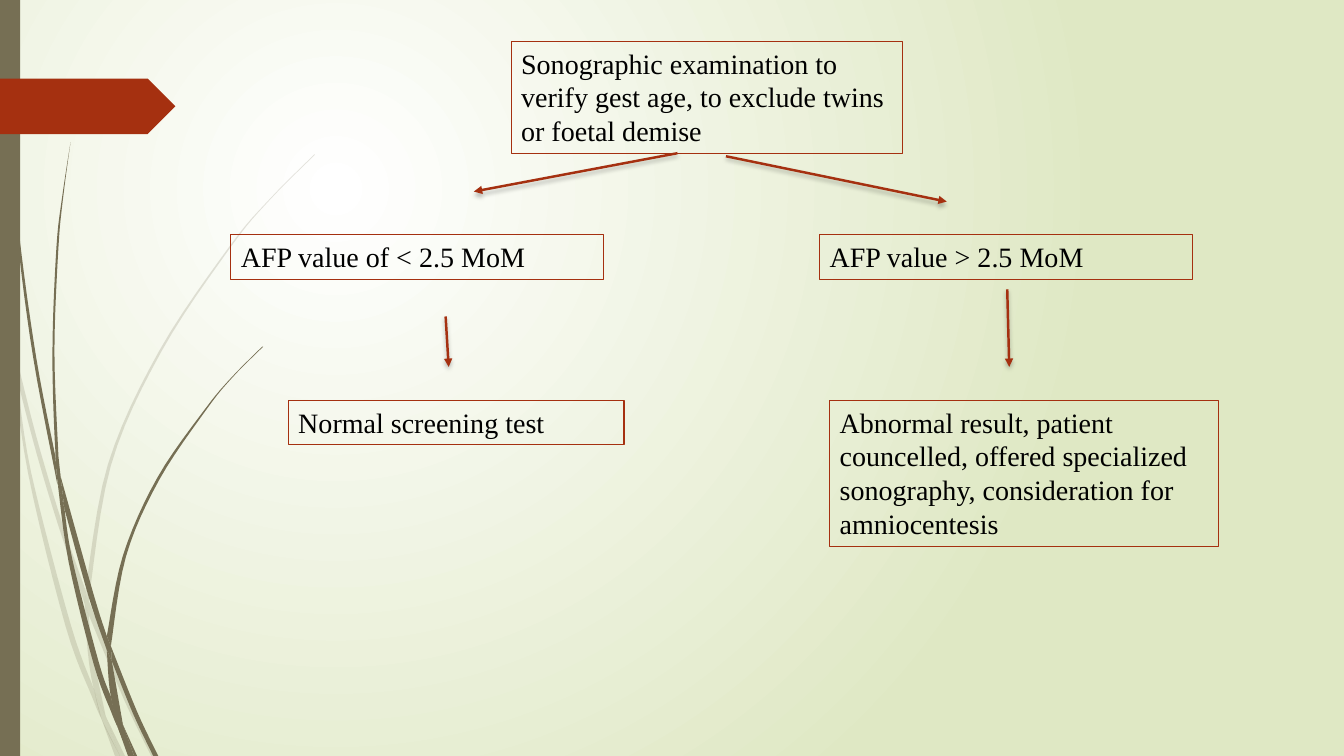
from dataclasses import dataclass

from lxml.etree import SubElement
from pptx import Presentation
from pptx.dml.color import RGBColor
from pptx.enum.shapes import MSO_CONNECTOR, MSO_SHAPE
from pptx.enum.text import MSO_AUTO_SIZE
from pptx.oxml.ns import qn
from pptx.slide import Slide
from pptx.util import Inches, Pt

COLORS = {
    "centre": "FFFFFF",
    "edge": "DFE8C4",
    "grass": "766F54",
    "accent": "A53010",
    "text": "000000",
}
FONT = "Times New Roman"
CURVE_STEPS = 6

Point = tuple[float, float]


@dataclass(frozen=True)
class Blade:
    """Piece of grass bounded by an outward edge and a returning edge."""
    outward: tuple[Point, ...]
    returning: tuple[Point, ...]


@dataclass(frozen=True)
class Step:
    text: str
    left: float
    top: float
    width: float
    height: float


@dataclass(frozen=True)
class Arrow:
    start: Point
    end: Point


PALE_BLADES = [
    Blade(((0, 2.82), (0.09, 3.22), (0.11, 3.5)), ((0.1, 3.44), (0, 2.99))),
    Blade(((0.14, 3.45), (0.36, 4.33), (0.62, 5.2), (0.85, 5.86)),
          ((0.84, 5.99), (0.58, 5.22), (0.36, 4.49), (0.17, 3.76))),
    Blade(((0.88, 5.96), (1.27, 6.92), (1.55, 7.5)),
          ((1.5, 7.5), (1.23, 6.94), (0.88, 6.1))),
    Blade(((1.05, 7.11), (1.24, 7.5)), ((1.19, 7.5),)),
    Blade(((0.11, 3.5), (0.28, 4.7), (0.65, 6.21), (0.92, 6.93), (1.01, 7.14)),
          ((0.93, 6.83), (0.7, 6.19), (0.31, 4.69), (0.17, 3.76))),
    Blade(((0.84, 5.99), (0.87, 6.46), (0.93, 6.83), (1.05, 7.11)),
          ((0.91, 6.46), (0.88, 6.1))),
    Blade(((3.12, 1.53), (2.68, 1.97), (2.28, 2.44), (1.58, 3.48), (1.07, 4.61), (0.85, 5.84)),
          ((0.88, 5.96), (1.1, 4.62), (1.6, 3.49), (2.29, 2.45), (2.68, 1.98), (3.12, 1.54))),
    Blade(((1.01, 7.14), (1.14, 7.5)), ((1.19, 7.5),)),
    Blade(((0.85, 5.86), (0.84, 5.99)), ((0.88, 6.1), (0.88, 5.96))),
    Blade(((0.93, 6.83), (1.01, 7.14), (1.19, 7.5)), ((1.05, 7.11), (0.96, 6.92))),
]

DARK_BLADES = [
    Blade(((0.03, 0), (0.07, 1.1), (0.17, 2.33), (0.33, 3.55), (0.57, 4.81)),
          ((0.55, 4.53), (0.36, 3.55), (0.19, 2.32), (0.08, 1.09), (0.04, 0))),
    Blade(((0.6, 4.72), (0.93, 5.9), (1.06, 6.31)),
          ((1.06, 6.45), (0.88, 5.92), (0.64, 5.05))),
    Blade(((1.1, 6.41), (1.36, 7.06), (1.57, 7.5)),
          ((1.52, 7.5), (1.32, 7.08), (1.11, 6.56))),
    Blade(((0.57, 4.77), (0.68, 5.57), (0.93, 6.59), (1.11, 7.08), (1.17, 7.22)),
          ((1.1, 6.91), (0.98, 6.57), (0.72, 5.56), (0.64, 5.05))),
    Blade(((0.7, 1.41), (0.62, 1.93), (0.56, 2.45), (0.52, 3.49), (0.55, 4.49), (0.6, 4.72)),
          ((0.58, 4.53), (0.54, 3.49), (0.58, 2.45), (0.63, 1.93), (0.7, 1.41))),
    Blade(((1.22, 7.19), (1.36, 7.5)), ((1.33, 7.5),)),
    Blade(((0.55, 4.49), (0.57, 4.77), (0.64, 5.05)), ((0.6, 4.72),)),
    Blade(((2.6, 3.44), (2.31, 3.73), (2.04, 4.05), (1.56, 4.74), (1.22, 5.51), (1.06, 6.31)),
          ((1.1, 6.41), (1.25, 5.52), (1.58, 4.76), (2.05, 4.06), (2.31, 3.74), (2.61, 3.44))),
    Blade(((1.17, 7.22), (1.27, 7.5)), ((1.31, 7.5),)),
    Blade(((1.06, 6.45), (1.1, 6.91), (1.22, 7.19)), ((1.11, 6.56),)),
    Blade(((1.06, 6.31), (1.06, 6.45)), ((1.11, 6.56), (1.1, 6.41))),
    Blade(((1.1, 6.91), (1.17, 7.22), (1.3, 7.5)),
          ((1.33, 7.5), (1.22, 7.19), (1.16, 7.06))),
]

STEPS = [
    Step("Sonographic examination to verify gest age, to exclude twins or foetal demise",
         5.07, 0.41, 3.88, 1.11),
    Step("AFP value of < 2.5 MoM", 2.29, 2.33, 3.7, 0.44),
    Step("Normal screening test", 2.86, 3.97, 3.33, 0.44),
    Step("AFP value > 2.5 MoM", 8.13, 2.33, 3.7, 0.44),
    Step("Abnormal result, patient councelled, offered specialized sonography, "
         "consideration for amniocentesis", 8.23, 3.97, 3.86, 1.45),
]

ARROWS = [
    Arrow((6.72, 1.52), (4.7, 1.9)),
    Arrow((7.2, 1.55), (9.39, 2)),
    Arrow((4.42, 3.14), (4.45, 3.64)),
    Arrow((9.99, 2.87), (10.01, 3.64)),
]


def color(name: str) -> RGBColor:
    return RGBColor.from_string(COLORS[name])


def smooth(knots: tuple[Point, ...]) -> list[Point]:
    """Return points along a Catmull-Rom curve through the knots."""
    padded = (knots[0], *knots, knots[-1])
    points = [knots[0]]
    for a, b, c, d in zip(padded, padded[1:], padded[2:], padded[3:]):
        for step in range(1, CURVE_STEPS + 1):
            t = step / CURVE_STEPS
            points.append(tuple(
                b[i] + t * (c[i] - a[i]) / 2
                + t**2 * (2 * a[i] - 5 * b[i] + 4 * c[i] - d[i]) / 2
                + t**3 * (3 * b[i] - a[i] - 3 * c[i] + d[i]) / 2
                for i in range(2)))
    return points


def paint_background(slide: Slide) -> None:
    fill = slide.background.fill
    fill.gradient()
    for stop, name, position in zip(fill.gradient_stops, ("centre", "edge"), (0, 1)):
        stop.color.rgb = color(name)
        stop.position = position
    gradient = slide.element.find(".//" + qn("a:gradFill"))
    gradient.remove(gradient.find(qn("a:lin")))
    circle = SubElement(gradient, qn("a:path"), path="circle")
    SubElement(circle, qn("a:fillToRect"), l="50000", t="50000", r="100000", b="100000")


def paint_solid(shape, name: str) -> None:
    shape.shadow.inherit = False
    shape.fill.solid()
    shape.fill.fore_color.rgb = color(name)
    shape.line.fill.background()


def draw_grass(slide: Slide, blades: list[Blade], opacity: int) -> None:
    group = slide.shapes.add_group_shape()
    for blade in blades:
        outline = [(Inches(x), Inches(y))
                   for x, y in smooth(blade.outward) + smooth(blade.returning)]
        builder = group.shapes.build_freeform(*outline[0])
        builder.add_line_segments(outline[1:], close=True)
        shape = builder.convert_to_shape()
        paint_solid(shape, "grass")
        if opacity < 100:
            fill_color = shape.element.spPr.find(qn("a:solidFill"))[0]
            SubElement(fill_color, qn("a:alpha"), val=str(opacity * 1000))


def draw_solid(slide: Slide, kind: MSO_SHAPE, top: float, width: float,
               height: float, name: str) -> None:
    """Draw a filled shape against the left edge of the slide."""
    shape = slide.shapes.add_shape(kind, 0, Inches(top), Inches(width), Inches(height))
    paint_solid(shape, name)


def draw_step(slide: Slide, step: Step) -> None:
    box = slide.shapes.add_textbox(
        Inches(step.left), Inches(step.top), Inches(step.width), Inches(step.height))
    box.line.color.rgb = color("accent")
    box.line.width = Pt(0.75)
    frame = box.text_frame
    frame.word_wrap = True
    frame.auto_size = MSO_AUTO_SIZE.SHAPE_TO_FIT_TEXT
    frame.text = step.text
    font = frame.paragraphs[0].runs[0].font
    font.name = FONT
    font.size = Pt(20)
    font.color.rgb = color("text")


def draw_arrow(slide: Slide, arrow: Arrow) -> None:
    ends = [Inches(value) for value in (*arrow.start, *arrow.end)]
    connector = slide.shapes.add_connector(MSO_CONNECTOR.STRAIGHT, *ends)
    connector.line.color.rgb = color("accent")
    connector.line.width = Pt(1.75)
    properties = connector.element.spPr
    SubElement(properties.find(qn("a:ln")), qn("a:tailEnd"), type="triangle")
    effects = SubElement(properties, qn("a:effectLst"))
    shadow = SubElement(effects, qn("a:outerShdw"), blurRad=str(Pt(3)), dist=str(Pt(2)),
                        dir="5400000", rotWithShape="0")
    shade = SubElement(shadow, qn("a:srgbClr"), val=COLORS["text"])
    SubElement(shade, qn("a:alpha"), val="25000")


def main() -> None:
    presentation = Presentation()
    presentation.slide_width = Inches(13.33)
    presentation.slide_height = Inches(7.5)
    slide = presentation.slides.add_slide(presentation.slide_layouts[6])
    paint_background(slide)
    draw_grass(slide, PALE_BLADES, 20)
    draw_grass(slide, DARK_BLADES, 100)
    draw_solid(slide, MSO_SHAPE.RECTANGLE, 0, 0.2, 7.5, "grass")
    draw_solid(slide, MSO_SHAPE.PENTAGON, 0.78, 1.74, 0.55, "accent")
    for step in STEPS:
        draw_step(slide, step)
    for arrow in ARROWS:
        draw_arrow(slide, arrow)
    presentation.save("out.pptx")


if __name__ == "__main__":
    main()
